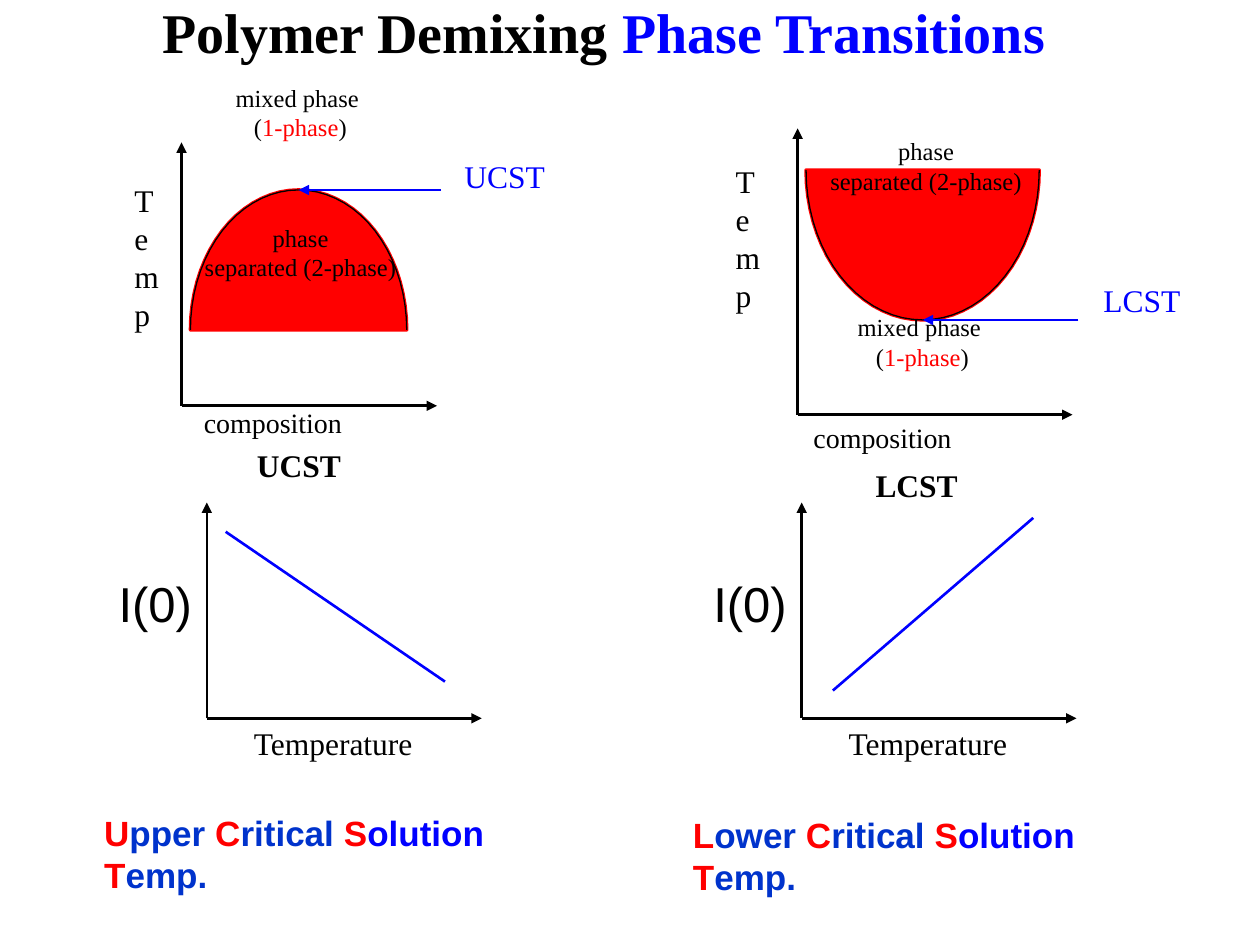
import math

import pptx
import pptx.dml.color
import pptx.enum.shapes
import pptx.enum.text
import pptx.oxml.ns
import pptx.util
from lxml import etree
from pptx.util import Cm

COLORS = {
    "black": "000000",
    "red": "FF0000",
    "blue": "0000FF",
    "navy": "0033CC",
}
SERIF = "Times New Roman"
SANS = "Arial"

SEPARATED = ["phase", "separated (2-phase)"]
MIXED = ["mixed phase ", [("(", "black"), ("1-phase", "red"), (")", "black")]]

# Lengths in cm; boxes are left, top, width, height
PHASE_DIAGRAMS = [
    {
        "name": "LCST", "corner": (16.08, 8.36), "top": 2.59, "right": 21.62,
        "center": (18.6, 3.43), "radii": (2.35, 3.02), "pointer_start": 21.74,
        "mixed": (15.6, 6.17, 5.99, 2.18), "separated": (16.46, 2.62, 4.42, 3.3),
        "composition": (16.15, 8.36, 5.59, 1.47), "temp": (14.58, 3.15, 1.83, 5.21),
        "heading": (17.4, 9.27, 3.58, 1.14), "label": (21.23, 5.54, 3.58, 1.3),
    },
    {
        "name": "UCST", "corner": (3.66, 8.18), "top": 2.87, "right": 8.81,
        "center": (6.02, 6.65), "radii": (2.18, -2.82), "pointer_start": 8.89,
        "mixed": (3.45, 1.55, 5.21, 1.96), "separated": (3.81, 4.37, 4.5, 2.59),
        "composition": (3.86, 8.05, 5.21, 1.4), "temp": (2.46, 3.53, 1.68, 4.8),
        "heading": (4.93, 8.86, 3.58, 1.07), "label": (8.51, 3.05, 3.33, 1.22),
    },
]


def rgb(color):
    return pptx.dml.color.RGBColor.from_string(COLORS[color])


def add_text(slide, box, paragraphs, size=18, font=SERIF, color="black",
             bold=False, centered=False, middle=False, wrap=True):
    """Each paragraph is a string or a list of (text, color) runs."""
    shape = slide.shapes.add_textbox(*map(Cm, box))
    frame = shape.text_frame
    frame.word_wrap = wrap
    if middle:
        frame.vertical_anchor = pptx.enum.text.MSO_ANCHOR.MIDDLE
    for index, content in enumerate(paragraphs):
        paragraph = frame.add_paragraph() if index else frame.paragraphs[0]
        if centered:
            paragraph.alignment = pptx.enum.text.PP_ALIGN.CENTER
        runs = [(content, color)] if isinstance(content, str) else content
        for text, run_color in runs:
            run = paragraph.add_run()
            run.text = text
            run.font.name = font
            run.font.size = pptx.util.Pt(size)
            run.font.bold = bold
            run.font.color.rgb = rgb(run_color)


def add_line(slide, start, end, color="black", width=1.5, arrow=False):
    connector = slide.shapes.add_connector(
        pptx.enum.shapes.MSO_CONNECTOR.STRAIGHT, *map(Cm, start + end))
    connector.line.color.rgb = rgb(color)
    connector.line.width = pptx.util.Pt(width)
    properties = connector._element.spPr
    if arrow:
        outline = properties.find(pptx.oxml.ns.qn("a:ln"))
        etree.SubElement(outline, pptx.oxml.ns.qn("a:tailEnd"), type="triangle")
    etree.SubElement(properties, pptx.oxml.ns.qn("a:effectLst"))


def add_axes(slide, corner, top, right):
    x, y = corner
    add_line(slide, corner, (x, top), arrow=True)
    add_line(slide, corner, (right, y), arrow=True)


def add_ellipse_part(slide, center, radii, first, last, color, width, filled=False):
    """Draw an elliptical arc between two angles in degrees."""
    points = []
    for angle in range(first, last + 1, 5):
        turn = math.radians(angle)
        points.append((Cm(center[0] + radii[0] * math.cos(turn)),
                       Cm(center[1] + radii[1] * math.sin(turn))))
    builder = slide.shapes.build_freeform(*points[0])
    builder.add_line_segments(points[1:], close=filled)
    shape = builder.convert_to_shape()
    shape.shadow.inherit = False
    if filled:
        shape.fill.solid()
        shape.fill.fore_color.rgb = rgb(color)
    else:
        shape.fill.background()
    shape.line.color.rgb = rgb(color)
    shape.line.width = pptx.util.Pt(width)


def add_phase_diagram(slide, diagram):
    center, radii = diagram["center"], diagram["radii"]
    # Two-phase region and its boundary
    add_ellipse_part(slide, center, radii, 0, 180, "red", 2, filled=True)
    for first in (0, 90):
        add_ellipse_part(slide, center, radii, first, first + 90, "black", 0.75)
    add_axes(slide, diagram["corner"], diagram["top"], diagram["right"])

    # Region and axis labels
    add_text(slide, diagram["mixed"], MIXED, size=14, centered=True)
    add_text(slide, diagram["separated"], SEPARATED, size=14, centered=True)
    add_text(slide, diagram["composition"], ["composition"], size=16)
    add_text(slide, diagram["temp"], list("Temp"))
    add_text(slide, diagram["heading"], [diagram["name"]], bold=True)

    # Critical point
    add_text(slide, diagram["label"], [diagram["name"]], color="blue", centered=True)
    critical_y = center[1] + radii[1]
    add_line(slide, (diagram["pointer_start"], critical_y), (center[0], critical_y),
             color="blue", width=1, arrow=True)


def add_intensity_graph(slide, left, start, end):
    bottom = 14.48
    add_axes(slide, (left, bottom), 10.13, left + 5.54)
    add_text(slide, (left + 0.7, bottom, 3.82, 0.99), ["Temperature"])
    add_text(slide, (left - 2.03, 11.43, 2.01, 1.78), ["Ι(0)"],
             size=28, font=SANS, wrap=False)
    add_line(slide, start, end, color="blue")


def add_caption(slide, left, top, first_word):
    runs = [
        (first_word[0], "red"), (first_word[1:] + " ", "navy"),
        ("C", "red"), ("ritical ", "navy"),
        ("S", "red"), ("olution ", "blue"),
        ("T", "red"), ("emp.", "navy"),
    ]
    add_text(slide, (left, top, 10.29, 1.09), [runs], size=20, font=SANS, bold=True)


def main():
    presentation = pptx.Presentation()
    presentation.slide_width = Cm(25.4)
    presentation.slide_height = Cm(19.05)
    slide = presentation.slides.add_slide(presentation.slide_layouts[6])

    # Phase diagrams
    for diagram in PHASE_DIAGRAMS:
        add_phase_diagram(slide, diagram)

    # Title
    title = [("Polymer Demixing ", "black"), ("Phase Transitions", "blue")]
    add_text(slide, (2.41, -0.97, 19.53, 3.18), [title], size=32,
             bold=True, centered=True, middle=True)

    # Scattered intensity against temperature
    add_intensity_graph(slide, 4.17, (4.55, 10.72), (8.97, 13.74))
    add_intensity_graph(slide, 16.16, (16.79, 13.92), (20.83, 10.44))

    # Captions
    add_caption(slide, 1.85, 16.23, "Upper")
    add_caption(slide, 13.72, 16.28, "Lower")

    presentation.save("out.pptx")


if __name__ == "__main__":
    main()
